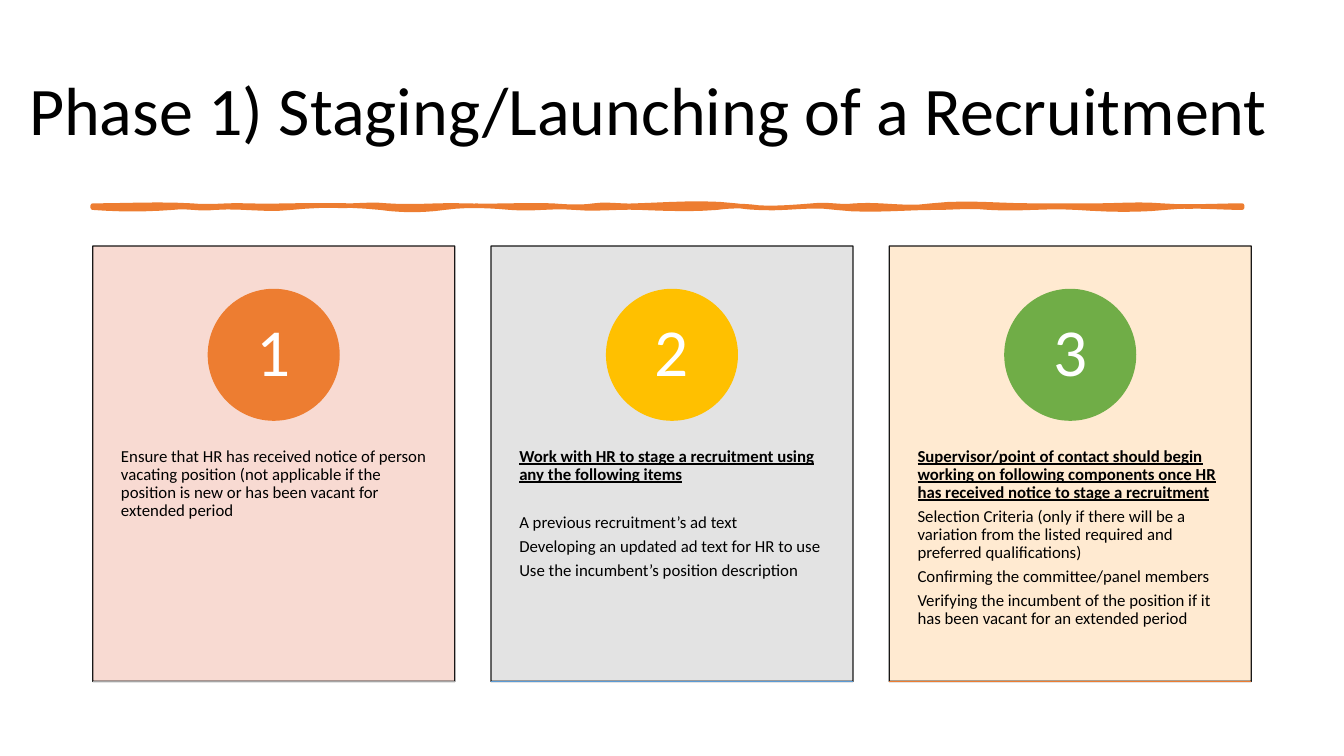
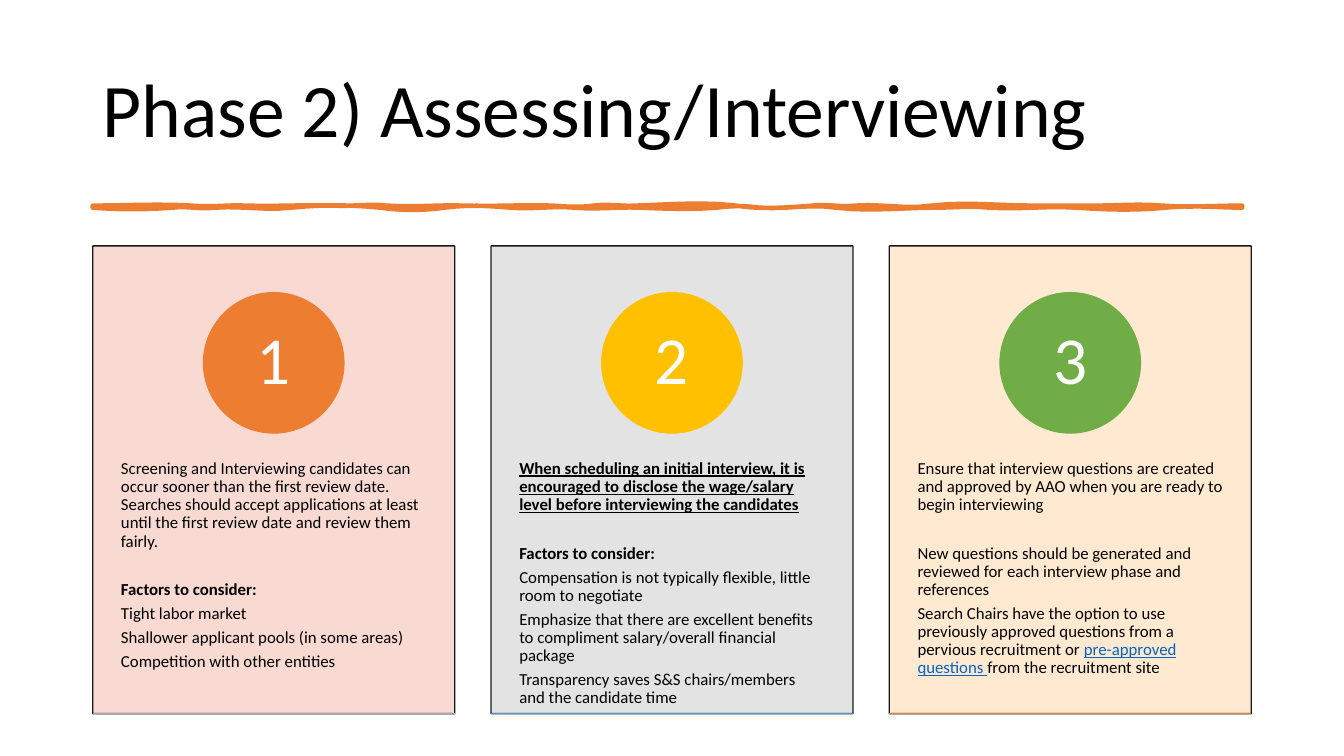
from lxml.etree import SubElement
from pptx import Presentation
from pptx.dml.color import RGBColor
from pptx.enum.shapes import MSO_CONNECTOR as Connector, MSO_SHAPE as Shape
from pptx.enum.text import MSO_ANCHOR as Anchor, PP_ALIGN as Align
from pptx.oxml.ns import qn
from pptx.util import Inches, Pt

FONT = "Calibri"
BLACK, WHITE, ORANGE, LINK = "000000", "FFFFFF", "ED7D31", "0563C1"
CARD_FILLS = ["F8D7CE", "E1E1E1", "FFE8CC"]
CIRCLE_FILLS = [ORANGE, "FFC000", "70AD47"]
BASE_COLORS = ["A5A5A5", "5B9BD5", ORANGE]
LEFT, CARD_TOP, CARD_WIDTH, CARD_STEP = 0.92, 2.44, 3.59, 3.95
STROKE_TOP, STROKE_BOTTOM = 2.04, 2.06
TOP_WAVES = [
    (1.9, 2.04, 2.02), (2.44, 2.06, 2.03), (3.31, 2.05, 2.03), (3.84, 2.05, 2.02),
    (4.6, 2.06, 2.03), (5.48, 2.05, 2.03), (5.89, 2.05, 2.06), (6.31, 2.02, 2.05),
    (7.3, 2.03, 2), (8.06, 2.08, 2.06), (8.48, 2.02, 2.06), (9.24, 2.02, 2.08),
    (10.23, 2, 2.04), (10.87, 2.04, 2.04), (11.52, 2.04, 2.02), (12.32, 2.06, 2.04),
]
BOTTOM_WAVES = [
    (11.56, 2.06, 2.03), (10.68, 2.09, 2.08), (9.81, 2.04, 2.08), (9.28, 2.04, 2.06),
    (8.29, 2.06, 2.1), (7.53, 2.02, 2.08), (7.11, 2.04, 2.04), (6.35, 2.08, 2.07),
    (5.7, 2.05, 2.08), (5.06, 2.04, 2.08), (4.41, 2.04, 2.03), (3.77, 2.09, 2.09),
    (2.89, 2.03, 2.03), (2.13, 2.09, 2.04), (1.71, 2.08, 2.04), (0.92, 2.08, 2.08),
]


def rgb(color):
    return RGBColor.from_string(color)


def span(text, size=12, color=BLACK, bold=False, underline=False, gap=0):
    return dict(text=text, size=size, color=color, bold=bold, underline=underline, gap=gap)


def heading(text):
    return [span(text, bold=True, underline=True)]


def wave_points(start, level, waves, steps=6):
    points = []
    for end, first, second in waves:
        for step in range(1, steps + 1):
            t = step / steps
            y = (level * ((1 - t) ** 3 + t ** 3)
                 + 3 * t * (1 - t) * (first * (1 - t) + second * t))
            points.append((start + (end - start) * t, y))
        start = end
    return points


class PhaseDeck:
    """Builds phase slides with a title, a brushed rule and numbered cards."""

    def __init__(self):
        self.deck = Presentation()
        self.deck.slide_width, self.deck.slide_height = Inches(13.33), Inches(7.5)
        self.page = None

    def add_page(self):
        self.page = self.deck.slides.add_slide(self.deck.slide_layouts[6])

    def paint(self, shape, fill, line, width=1, alpha=None):
        shape.shadow.inherit = False
        shape.fill.solid()
        shape.fill.fore_color.rgb = rgb(fill)
        shape.line.color.rgb = rgb(line)
        shape.line.width = Pt(width)
        if alpha:
            for color in shape._element.spPr.iter(qn("a:srgbClr")):
                SubElement(color, qn("a:alpha"), val=str(alpha * 1000))

    def set_text(self, shape, paras, insets, anchor=Anchor.TOP, align=Align.LEFT, after=0):
        frame = shape.text_frame
        frame.word_wrap = True
        frame.vertical_anchor = anchor
        frame.margin_left = frame.margin_right = Inches(insets[0])
        frame.margin_top = frame.margin_bottom = Inches(insets[1])
        for index, spans in enumerate(paras):
            para = frame.add_paragraph() if index else frame.paragraphs[0]
            para.alignment, para.line_spacing = align, 0.9
            para.space_before, para.space_after = Pt(spans[0]["gap"]), Pt(after)
            for item in spans:
                run = para.add_run()
                run.text = item["text"]
                run.font.name, run.font.size = FONT, Pt(item["size"])
                run.font.bold, run.font.underline = item["bold"], item["underline"]
                run.font.color.rgb = rgb(item["color"])

    def text_box(self, left, top, width, height, paras, insets, **style):
        box = self.page.shapes.add_textbox(
            Inches(left), Inches(top), Inches(width), Inches(height))
        self.set_text(box, paras, insets, **style)

    def shape(self, kind, left, top, width, height, fill, line, **style):
        shape = self.page.shapes.add_shape(
            kind, Inches(left), Inches(top), Inches(width), Inches(height))
        self.paint(shape, fill, line, **style)
        return shape

    def title(self, text, left, width, size):
        self.text_box(left, 0.4, width, 1.45, [[span(text, size=size)]],
                      (0.1, 0.05), anchor=Anchor.MIDDLE)

    def brushed_rule(self):
        right = TOP_WAVES[-1][0]
        points = wave_points(LEFT, STROKE_TOP, TOP_WAVES) + [(right, STROKE_BOTTOM)]
        points += wave_points(right, STROKE_BOTTOM, BOTTOM_WAVES)
        builder = self.page.shapes.build_freeform(
            Inches(LEFT), Inches(STROKE_TOP), scale=1.0)
        builder.add_line_segments([(Inches(x), Inches(y)) for x, y in points], close=True)
        self.paint(builder.convert_to_shape(), ORANGE, ORANGE, width=3.25)

    def base_line(self, left, y, color):
        line = self.page.shapes.add_connector(
            Connector.STRAIGHT, Inches(left), Inches(y), Inches(left + CARD_WIDTH), Inches(y))
        line.line.color.rgb = rgb(color)
        line.line.width = Pt(1)
        SubElement(line._element.spPr, qn("a:effectLst"))

    def card(self, index, height, paras):
        left = LEFT + index * CARD_STEP
        self.shape(Shape.RECTANGLE, left, CARD_TOP, CARD_WIDTH, height,
                   CARD_FILLS[index], BLACK, alpha=90)
        self.text_box(left, CARD_TOP + 0.38 * height, CARD_WIDTH, 0.6 * height,
                      paras, (0.28, 0.36), after=4.2)
        size, color = 0.3 * height, CIRCLE_FILLS[index]
        circle = self.shape(Shape.OVAL, left + (CARD_WIDTH - size) / 2,
                            CARD_TOP + 0.1 * height, size, size, color, color)
        self.set_text(circle, [[span(str(index + 1), size=48, color=WHITE)]], (0, 0),
                      anchor=Anchor.MIDDLE, align=Align.CENTER)
        self.base_line(left, CARD_TOP + height, BASE_COLORS[index])

    def phase(self, title, left, width, size, card_height, cards):
        self.add_page()
        self.title(title, left, width, size)
        self.brushed_rule()
        for index, paras in enumerate(cards):
            self.card(index, card_height, paras)


STAGING_CARDS = [
    [[span("Ensure that HR has received notice of person vacating position (not applicable "
           "if the position is new or has been vacant for extended period")]],
    [heading("Work with HR to stage a recruitment using any the following items"),
     [span("A previous recruitment’s ad text", gap=17.4)],
     [span("Developing an updated ad text for HR to use")],
     [span("Use the incumbent’s position description")]],
    [heading("Supervisor/point of contact should begin working on following components "
             "once HR has received notice to stage a recruitment"),
     [span("Selection Criteria (only if there will be a variation from the listed "
           "required and preferred qualifications)")],
     [span("Confirming the committee/panel members")],
     [span("Verifying the incumbent of the position if it has been vacant for an "
           "extended period")]],
]
FACTORS = [span("Factors to consider:", bold=True, gap=17.4)]
ASSESSING_CARDS = [
    [[span("Screening and Interviewing candidates can occur sooner than the first review "
           "date. Searches should accept applications at least until the first review "
           "date and review them fairly.")],
     FACTORS,
     [span("Tight labor market")],
     [span("Shallower applicant pools (in some areas)")],
     [span("Competition with other entities")]],
    [heading("When scheduling an initial interview, it is encouraged to disclose the "
             "wage/salary level before interviewing the candidates"),
     FACTORS,
     [span("Compensation is not typically flexible, little room to negotiate")],
     [span("Emphasize that there are excellent benefits to compliment salary/overall "
           "financial package")],
     [span("Transparency saves S&S chairs/members and the candidate time")]],
    [[span("Ensure that interview questions are created and approved by AAO when you are "
           "ready to begin interviewing")],
     [span("New questions should be generated and reviewed for each interview phase and "
           "references", gap=17.4)],
     [span("Search Chairs have the option to use previously approved questions from a "
           "pervious recruitment or "),
      span("pre-approved questions ", color=LINK, underline=True),
      span("from the recruitment site")]],
]


def main():
    slides = PhaseDeck()
    slides.phase("Phase 1) Staging/Launching of a Recruitment", 0.19, 12.71, 48.6,
                 4.32, STAGING_CARDS)
    slides.phase("Phase 2) Assessing/Interviewing", LEFT, 11.5, 54, 4.64, ASSESSING_CARDS)
    slides.deck.save("out.pptx")


if __name__ == "__main__":
    main()
